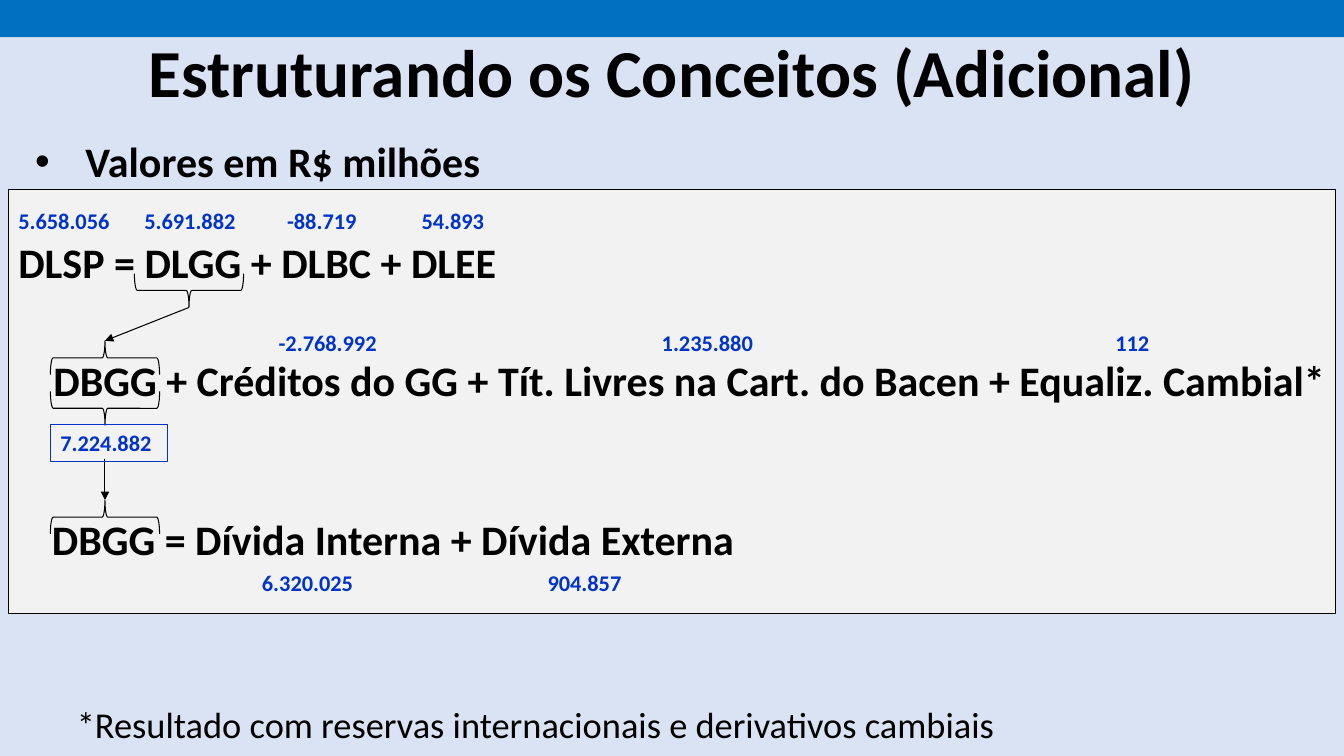
from lxml import etree
from pptx import Presentation
from pptx.dml.color import RGBColor
from pptx.enum import shapes, text
from pptx.oxml.ns import qn
from pptx.util import Pt

FONT = "Calibri"
BLACK = "000000"
BLUE = "0033CC"
LABEL_HEIGHT = 26.6
BRACE_DEPTH, BRACE_SPAN = 24, 78


def color(code):
    return RGBColor.from_string(code)


def write(frame, words, size, ink=BLACK, bold=True):
    frame.word_wrap = True
    frame.vertical_anchor = text.MSO_ANCHOR.TOP
    para = frame.paragraphs[0]
    para.text = words
    para.font.name = FONT
    para.font.size = Pt(size)
    para.font.bold = bold
    para.font.color.rgb = color(ink)
    return para


def add_text(page, words, left, top, width, height, size, ink=BLACK, bold=True):
    box = page.shapes.add_textbox(Pt(left), Pt(top), Pt(width), Pt(height))
    write(box.text_frame, words, size, ink, bold)
    return box


def add_formula(page, words, left, top, width=920):
    add_text(page, words, left, top, width, 54, 30)


def add_value(page, words, left, top, width=84):
    return add_text(page, words, left, top, width, LABEL_HEIGHT, 16, BLUE)


def add_bullet(page, words, left, top, width, height):
    box = page.shapes.add_textbox(Pt(left), Pt(top), Pt(width), Pt(height))
    para = box.text_frame.paragraphs[0]
    props = para._p.get_or_add_pPr()
    props.set("marL", str(Pt(36)))
    props.set("indent", str(-Pt(36)))
    etree.SubElement(props, qn("a:buFont"), typeface="Arial")
    etree.SubElement(props, qn("a:buChar"), char="•")
    write(box.text_frame, words, 30)


def add_shape(page, kind, left, top, width, height, fill=None, line=None):
    shape = page.shapes.add_shape(kind, Pt(left), Pt(top), Pt(width), Pt(height))
    shape.shadow.inherit = False
    if fill:
        shape.fill.solid()
        shape.fill.fore_color.rgb = color(fill)
    else:
        shape.fill.background()
    if line:
        shape.line.color.rgb = color(line)
        shape.line.width = Pt(0.75)
    else:
        shape.line.fill.background()
    return shape


def add_brace(page, center_x, center_y, rotation):
    """Horizontal brace: its tip points down at 90 degrees and up at 270."""
    brace = add_shape(page, shapes.MSO_SHAPE.RIGHT_BRACE,
                      center_x - BRACE_DEPTH / 2, center_y - BRACE_SPAN / 2,
                      BRACE_DEPTH, BRACE_SPAN, line=BLACK)
    brace.rotation = rotation


def add_arrow(page, x1, y1, x2, y2):
    arrow = page.shapes.add_connector(shapes.MSO_CONNECTOR.STRAIGHT,
                                      Pt(x1), Pt(y1), Pt(x2), Pt(y2))
    arrow.line.color.rgb = color(BLACK)
    arrow.line.width = Pt(0.75)
    etree.SubElement(arrow.line._get_or_add_ln(), qn("a:tailEnd"), type="triangle")
    etree.SubElement(arrow._element.spPr, qn("a:effectLst"))


def set_title(page, words):
    title = page.shapes.title
    title.left, title.top, title.width, title.height = Pt(47.5), Pt(18), Pt(865), Pt(108)
    title.text_frame.auto_size = text.MSO_AUTO_SIZE.NONE
    write(title.text_frame, words, 48).alignment = text.PP_ALIGN.CENTER


def main():
    deck = Presentation()
    deck.slide_width, deck.slide_height = Pt(960), Pt(540)
    page = deck.slides.add_slide(deck.slide_layouts[5])
    page.background.fill.solid()
    page.background.fill.fore_color.rgb = color("DAE3F3")

    rectangle = shapes.MSO_SHAPE.RECTANGLE
    add_shape(page, rectangle, 0, 0, 960, 26.6, fill="0070C0")
    add_shape(page, rectangle, 6, 135.4, 948, 302.6, fill="F2F2F2", line=BLACK)
    set_title(page, "Estruturando os Conceitos (Adicional)")
    add_bullet(page, "Valores em R$ milhões", 18, 93.6, 906, 44)

    add_formula(page, "DLSP = DLGG + DLBC + DLEE", 6, 165.6)
    add_formula(page, "DBGG + Créditos do GG + Tít. Livres na Cart. do Bacen"
                " + Equaliz. Cambial*", 31, 249.6, 929)
    add_formula(page, "DBGG = Dívida Interna + Dívida Externa", 30, 363.6)
    add_text(page, "*Resultado com reservas internacionais e derivativos cambiais",
             47.8, 498.2, 900, 41, 26, bold=False)

    for center_x, center_y, rotation in [(135, 207.4, 90), (75, 255.6, 270),
                                         (75, 291.6, 90), (75, 369.4, 270)]:
        add_brace(page, center_x, center_y, rotation)
    add_arrow(page, 135, 219.6, 75, 243.4)
    add_arrow(page, 75, 327.6, 75, 357.2)

    value_rows = {
        144.4: [("5.658.056", 6), ("5.691.882", 96), ("-88.719", 198), ("54.893", 294)],
        231.6: [("-2.768.992", 192, 100), ("1.235.880", 465.6), ("112", 789.6)],
        402.8: [("6.320.025", 180), ("904.857", 384)],
    }
    for top, values in value_rows.items():
        for words, left, *width in values:
            add_value(page, words, left, top, *width)
    total = add_value(page, "7.224.882", 36, 303.2)
    total.line.color.rgb = color(BLUE)
    total.line.width = Pt(0.75)

    deck.save("out.pptx")


if __name__ == "__main__":
    main()
